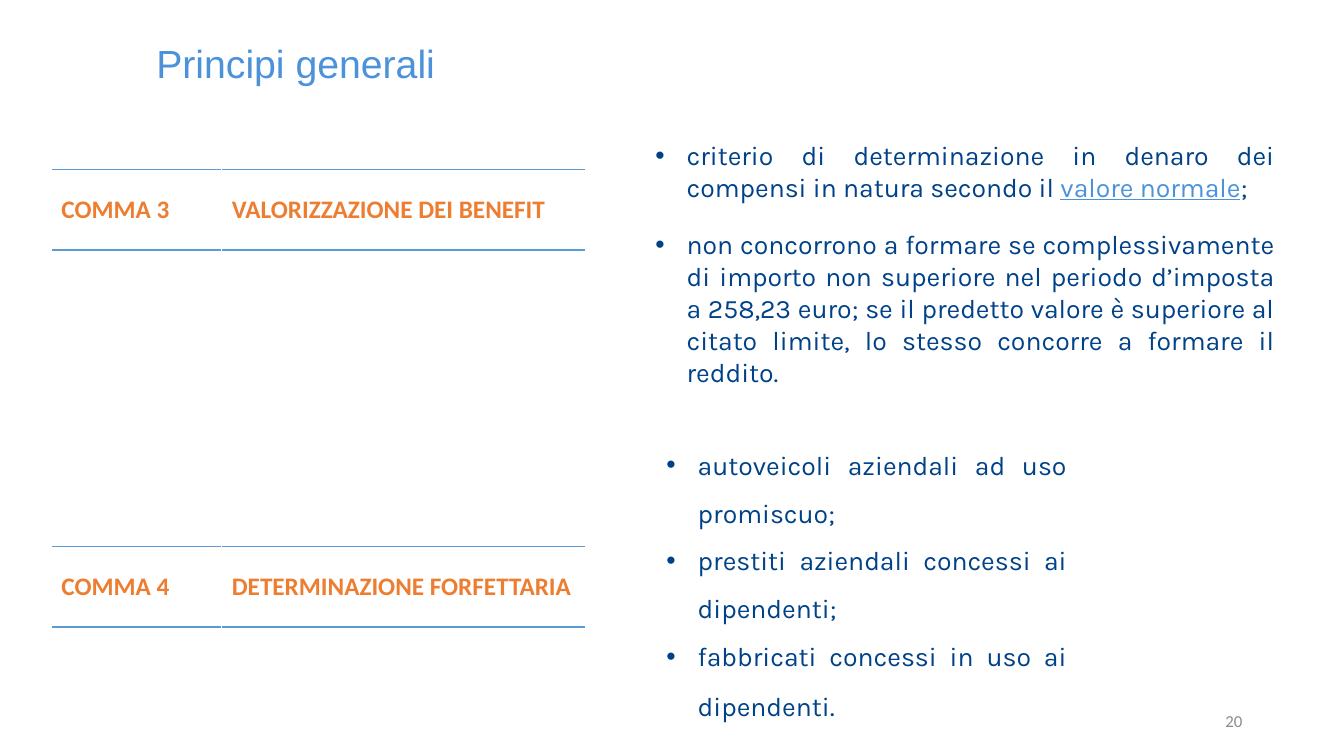
from dataclasses import dataclass

from lxml.etree import SubElement
from pptx import Presentation
from pptx.dml.color import RGBColor
from pptx.enum.text import MSO_ANCHOR, MSO_AUTO_SIZE, PP_ALIGN
from pptx.oxml import parse_xml
from pptx.oxml.ns import nsdecls, qn
from pptx.util import Inches, Pt


@dataclass(frozen=True)
class Theme:
    blue: str = "4B92DB"
    navy: str = "004288"
    orange: str = "ED7D31"
    rule: str = "5B9BD5"
    gray: str = "8C8C8C"
    title_size: int = 28
    body_size: int = 19
    end_size: int = 20
    label_size: int = 18
    number_size: int = 12


THEME = Theme()
TITLE = dict(name="Arial", size=THEME.title_size, color=THEME.blue)
BODY = dict(name="Karla", size=THEME.body_size, color=THEME.navy)
ACCENT = {**BODY, "color": THEME.blue, "underline": True}
BODY_END = {**BODY, "size": THEME.end_size}
LABEL = dict(name="Calibri", size=THEME.label_size, color=THEME.orange, bold=True)
NUMBER = dict(name="Calibri", size=THEME.number_size, color=THEME.gray)

CRITERIA = [
    [("criterio di determinazione in denaro dei compensi in natura secondo il ", BODY),
     ("valore normale", ACCENT), (";", BODY)],
    [("non concorrono a formare se complessivamente di importo non superiore "
      "nel periodo d’imposta a 258,23 euro; se il predetto valore è superiore al "
      "citato limite, lo stesso concorre a formare il reddito.", BODY)],
]
FLAT_RATE = [
    [("autoveicoli aziendali ad uso promiscuo;", BODY)],
    [("prestiti aziendali concessi ai dipendenti;", BODY)],
    [("fabbricati concessi in uso ai dipendenti", BODY), (".", BODY_END)],
]


def apply(target, values):
    for name, value in values.items():
        setattr(target, name, value)


def add_run(p, text, style):
    r = p.add_run()
    r.text = text
    values = {k: v for k, v in style.items() if k != "color"}
    apply(r.font, {**values, "size": Pt(style["size"])})
    r.font.color.rgb = RGBColor.from_string(style["color"])


def place(sp, left, top, width, height):
    apply(sp, dict(left=Inches(left), top=Inches(top),
                   width=Inches(width), height=Inches(height)))


def add_bullet(p):
    pPr = p._p.get_or_add_pPr()
    pPr.set("marL", str(Inches(0.31)))
    pPr.set("indent", str(-Inches(0.31)))
    SubElement(pPr, qn("a:buFont")).set("typeface", "Arial")
    SubElement(pPr, qn("a:buChar")).set("char", "•")


def fill_title(sp, box, text):
    place(sp, *box)
    tf = sp.text_frame
    apply(tf, dict(word_wrap=False, auto_size=MSO_AUTO_SIZE.NONE,
                   vertical_anchor=MSO_ANCHOR.TOP))
    p = tf.paragraphs[0]
    p.alignment = PP_ALIGN.LEFT
    add_run(p, text, TITLE)


def fill_list(sp, box, items, frame, spacing, gap=0):
    place(sp, *box)
    tf = sp.text_frame
    apply(tf, dict(auto_size=MSO_AUTO_SIZE.NONE,
                   vertical_anchor=MSO_ANCHOR.MIDDLE, **frame))
    for i, runs in enumerate(items):
        p = tf.add_paragraph() if i else tf.paragraphs[0]
        add_bullet(p)
        apply(p, dict(alignment=PP_ALIGN.JUSTIFY, line_spacing=spacing,
                      space_before=Pt(gap if i else 0), space_after=Pt(0)))
        for text, style in runs:
            add_run(p, text, style)


def add_rules(cell):
    tcPr = cell._tc.get_or_add_tcPr()
    for i, side in enumerate(("lnT", "lnB")):
        tcPr.insert(i, parse_xml(
            f'<a:{side} {nsdecls("a")} w="{Pt(1)}"><a:solidFill>'
            f'<a:srgbClr val="{THEME.rule}"/></a:solidFill></a:{side}>'))


def add_heading(s, top, texts):
    frame = s.shapes.add_table(1, 2, Inches(0.51), Inches(top),
                               Inches(5.3), Inches(0.8))
    table = frame.table
    apply(table, dict(first_row=False, horz_banding=False))
    for column, width, cell, text in zip(table.columns, (1.69, 3.61),
                                         table.iter_cells(), texts):
        column.width = Inches(width)
        cell.fill.background()
        cell.vertical_anchor = MSO_ANCHOR.MIDDLE
        add_rules(cell)
        add_run(cell.text_frame.paragraphs[0], text, LABEL)


def add_number(s, text):
    sp = s.shapes.add_textbox(Inches(9.42), Inches(6.95), Inches(3), Inches(0.4))
    tf = sp.text_frame
    apply(tf, dict(word_wrap=True, vertical_anchor=MSO_ANCHOR.MIDDLE))
    p = tf.paragraphs[0]
    p.alignment = PP_ALIGN.RIGHT
    add_run(p, text, NUMBER)


def main():
    prs = Presentation()
    apply(prs, dict(slide_width=Inches(13.33), slide_height=Inches(7.5)))
    s = prs.slides.add_slide(prs.slide_layouts[3])
    title, criteria, flat_rate = s.placeholders

    fill_title(title, (1.45, 0.34, 3, 0.57), "Principi generali")
    fill_list(criteria, (6.3, 1.74, 6.62, 1.75), CRITERIA,
              dict(word_wrap=True, margin_left=Inches(0.2),
                   margin_right=Inches(0.28)), 1.0, gap=18)
    fill_list(flat_rate, (6.51, 4.43, 4.17, 2.6), FLAT_RATE,
              dict(word_wrap=False), 1.5)
    add_heading(s, 1.68, ("COMMA 3", "VALORIZZAZIONE DEI BENEFIT"))
    add_heading(s, 5.42, ("COMMA 4", "DETERMINAZIONE FORFETTARIA"))
    add_number(s, "20")
    prs.save("out.pptx")


if __name__ == "__main__":
    main()
